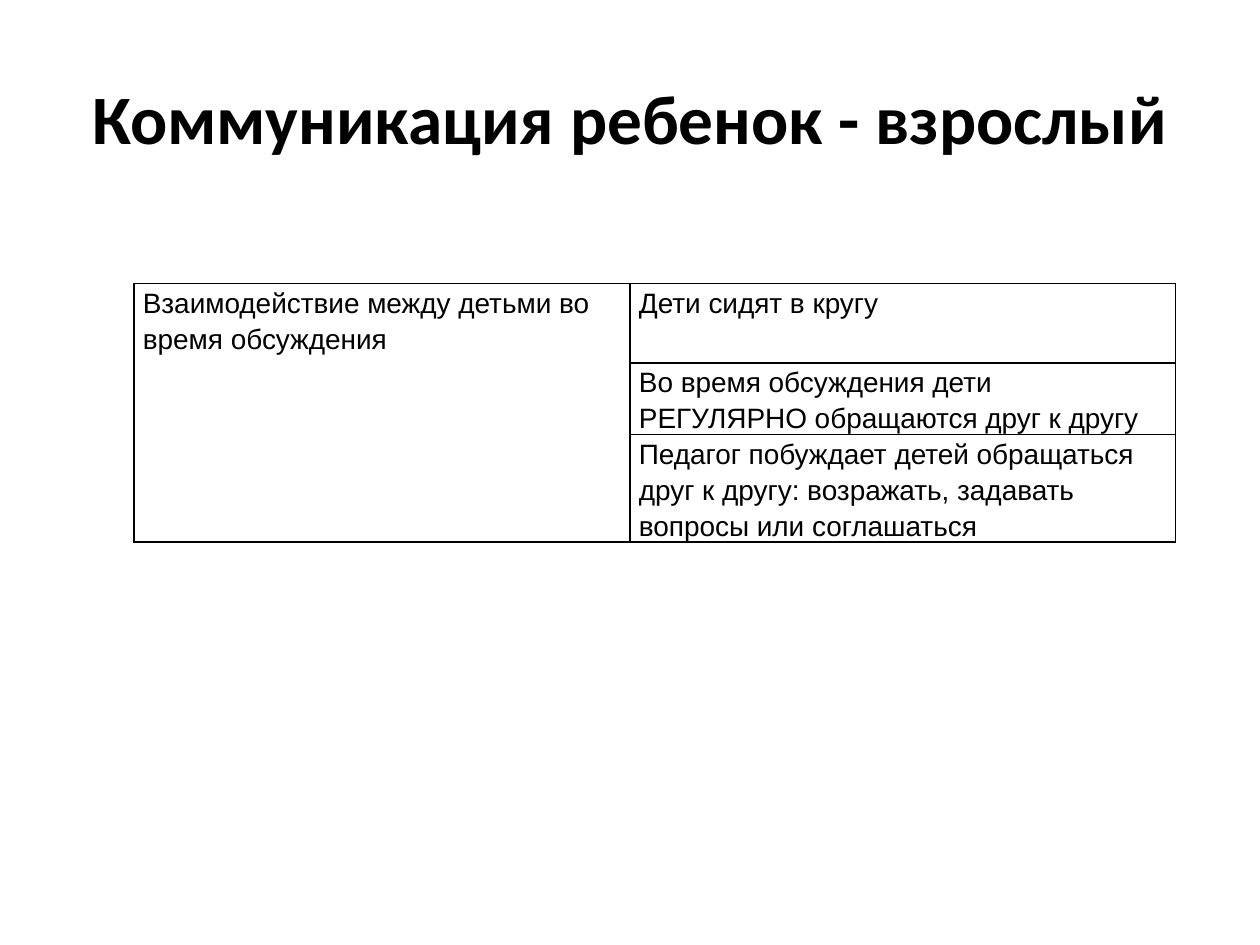
from lxml.etree import SubElement
from pptx import Presentation
from pptx.dml.color import RGBColor
from pptx.enum.text import MSO_ANCHOR, MSO_AUTO_SIZE, PP_ALIGN
from pptx.oxml.ns import qn
from pptx.util import Cm, Pt

BLACK = RGBColor(0, 0, 0)
COLS = [10, 11]
ROWS = [1.6, 1.44, 2.16]
TOPIC = "Взаимодействие между детьми во время обсуждения"
SIGNS = [
    "Дети сидят в кругу",
    "Во время обсуждения дети РЕГУЛЯРНО обращаются друг к другу",
    "Педагог побуждает детей обращаться друг к другу: возражать, задавать вопросы или соглашаться",
]


class Deck:
    def __init__(self):
        self.prs = Presentation()
        self.prs.slide_width = Cm(25.4)
        self.prs.slide_height = Cm(19.05)
        self.slide = self.prs.slides.add_slide(self.prs.slide_layouts[5])

    def font(self, par, name, size, bold=False):
        font = par.font
        font.name, font.size, font.bold = name, Pt(size), bold
        font.color.rgb = BLACK

    def title(self, text):
        shape = self.slide.shapes.title
        shape.left, shape.top = Cm(1.27), Cm(0.76)
        shape.width, shape.height = Cm(22.86), Cm(3.18)
        frame = shape.text_frame
        frame.text = text
        frame.auto_size = MSO_AUTO_SIZE.NONE
        frame.vertical_anchor = MSO_ANCHOR.MIDDLE
        par = frame.paragraphs[0]
        par.alignment = PP_ALIGN.CENTER
        self.font(par, "Calibri", 39.6, True)

    def border(self, cell):
        props = cell._tc.get_or_add_tcPr()
        for pos, side in enumerate(("lnL", "lnR", "lnT", "lnB")):
            line = SubElement(props, qn(f"a:{side}"), w=str(Pt(1)))
            fill = SubElement(line, qn("a:solidFill"))
            SubElement(fill, qn("a:srgbClr"), val=str(BLACK))
            props.remove(line)
            props.insert(pos, line)

    def cell(self, cell, text):
        cell.text = text
        cell.fill.background()
        cell.margin_left = cell.margin_right = Cm(0.18)
        cell.margin_top = cell.margin_bottom = 0
        cell.vertical_anchor = MSO_ANCHOR.TOP
        par = cell.text_frame.paragraphs[0]
        par.line_spacing = 1.15
        self.font(par, "Arial", 16)
        self.border(cell)

    def table(self, left, top, topic, signs):
        frame = self.slide.shapes.add_table(
            len(ROWS), len(COLS), Cm(left), Cm(top), Cm(sum(COLS)), Cm(sum(ROWS)))
        table = frame.table
        table.first_row = table.horz_banding = False
        for col, width in zip(table.columns, COLS):
            col.width = Cm(width)
        for row, height in zip(table.rows, ROWS):
            row.height = Cm(height)
        for num, sign in enumerate(signs):
            self.cell(table.cell(num, 0), "" if num else topic)
            self.cell(table.cell(num, 1), sign)
        table.cell(0, 0).merge(table.cell(len(signs) - 1, 0))


def main():
    deck = Deck()
    deck.title("Коммуникация ребенок - взрослый")
    deck.table(2.7, 5.72, TOPIC, SIGNS)
    deck.prs.save("out.pptx")


if __name__ == "__main__":
    main()
